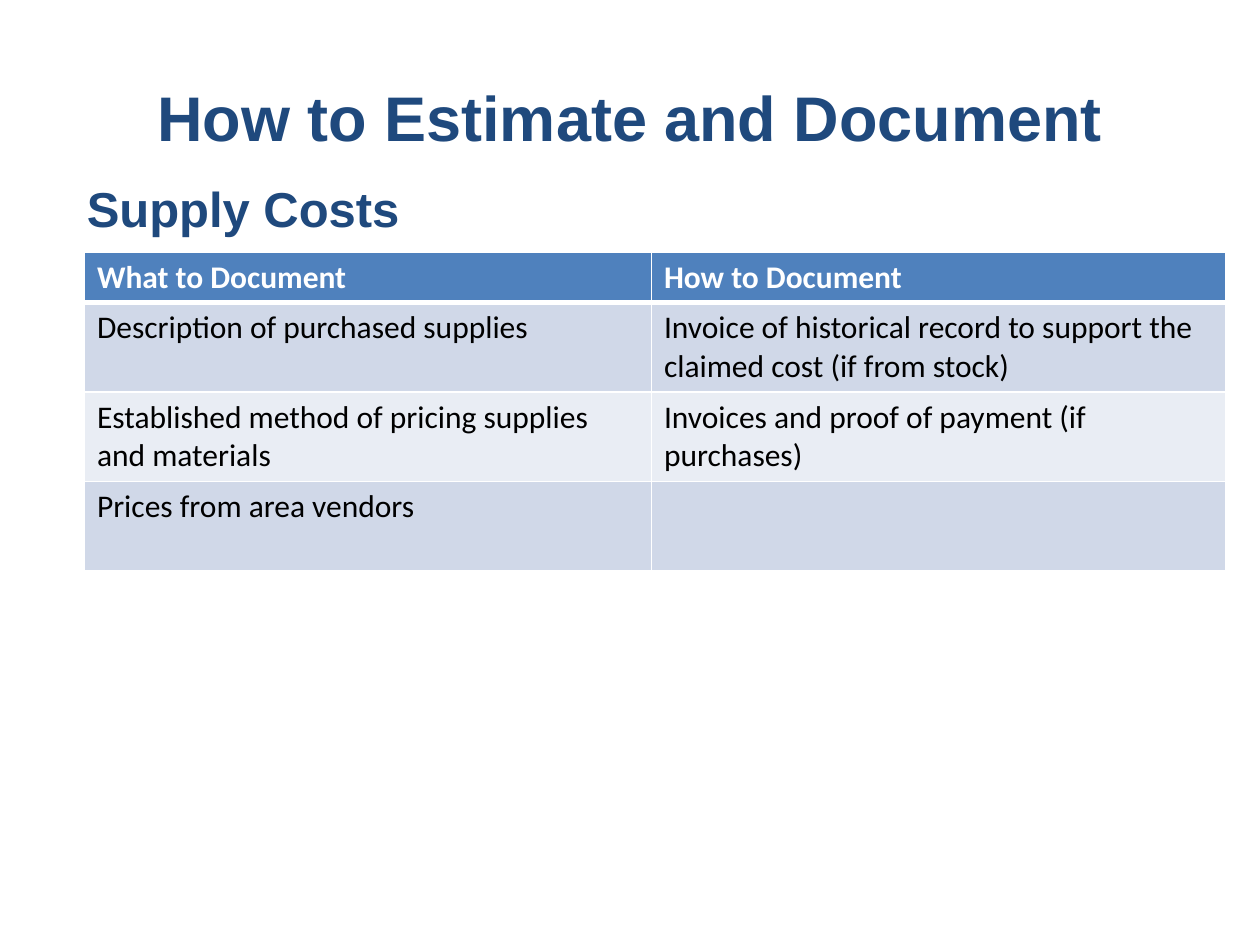
from lxml import etree
from pptx import Presentation
from pptx.dml.color import RGBColor
from pptx.enum.text import MSO_ANCHOR, PP_ALIGN
from pptx.oxml.ns import qn
from pptx.util import Inches, Pt

MIDDLE, TOP = MSO_ANCHOR.MIDDLE, MSO_ANCHOR.TOP
CENTER, LEFT = PP_ALIGN.CENTER, PP_ALIGN.LEFT

NAVY, WHITE, BLACK = "1F497D", "FFFFFF", "000000"
HEADER_FILL = "4F81BD"
BAND_FILLS = ("D0D8E8", "E9EDF4")
COLUMN_WIDTHS = (4.5, 4.56)
ROW_HEIGHTS = (0.4, 0.71, 0.71, 0.71)
DOCUMENTATION = (
    ("What to Document", "How to Document"),
    ("Description of purchased supplies",
     "Invoice of historical record to support the claimed cost (if from stock)"),
    ("Established method of pricing supplies and materials",
     "Invoices and proof of payment (if purchases)"),
    ("Prices from area vendors", ""),
)


def color(value):
    """Turn a hex string into a colour."""
    return RGBColor.from_string(value)


def style(paragraph, family, size, value, bold):
    """Set the font of a whole paragraph."""
    font = paragraph.font
    font.name, font.size, font.bold = family, Pt(size), bold
    font.color.rgb = color(value)


def add_heading(slide, box, text, size, anchor, align, left_inset=0.1, top_inset=0.05):
    """Place one bold navy heading in the given box."""
    frame = slide.shapes.add_textbox(*map(Inches, box)).text_frame
    frame.word_wrap = True
    frame.vertical_anchor = anchor
    frame.margin_left, frame.margin_top = Inches(left_inset), Inches(top_inset)
    heading = frame.paragraphs[0]
    heading.text, heading.alignment = text, align
    style(heading, "Arial", size, NAVY, True)


def add_border(cell, side, width):
    """Draw a white border on one side of a cell."""
    line = etree.SubElement(cell._tc.get_or_add_tcPr(), qn(f"a:ln{side}"), w=str(Pt(width)))
    fill = etree.SubElement(line, qn("a:solidFill"))
    etree.SubElement(fill, qn("a:srgbClr"), val=WHITE)


def add_documentation_table(slide, box):
    """Place the banded table of documents in the given box."""
    table = slide.shapes.add_table(
        len(DOCUMENTATION), len(COLUMN_WIDTHS), *map(Inches, box)).table
    for column, width in zip(table.columns, COLUMN_WIDTHS):
        column.width = Inches(width)
    for index, (row, height, texts) in enumerate(
            zip(table.rows, ROW_HEIGHTS, DOCUMENTATION)):
        row.height = Inches(height)
        header = index == 0
        for cell, text in zip(row.cells, texts):
            for side in "LRT":
                add_border(cell, side, 3 if side == "T" and index == 1 else 1)
            add_border(cell, "B", 3 if header else 1)
            cell.fill.solid()
            cell.fill.fore_color.rgb = color(
                HEADER_FILL if header else BAND_FILLS[(index - 1) % 2])
            cell.text = text
            style(cell.text_frame.paragraphs[0], "Calibri", 18,
                  WHITE if header else BLACK, header)


def main():
    """Build and save the slide."""
    deck = Presentation()
    deck.slide_width, deck.slide_height = Inches(10), Inches(7.5)
    slide = deck.slides.add_slide(deck.slide_layouts[6])
    add_heading(slide, (0.5, 0.3, 9, 1.25), "How to Estimate and Document",
                36, MIDDLE, CENTER)
    add_heading(slide, (0.53, 1.33, 9.17, 4.95), "Supply Costs",
                28, TOP, LEFT, left_inset=0.16, top_inset=0.09)
    add_documentation_table(slide, (0.67, 2, sum(COLUMN_WIDTHS), sum(ROW_HEIGHTS)))
    deck.save("out.pptx")


if __name__ == "__main__":
    main()
